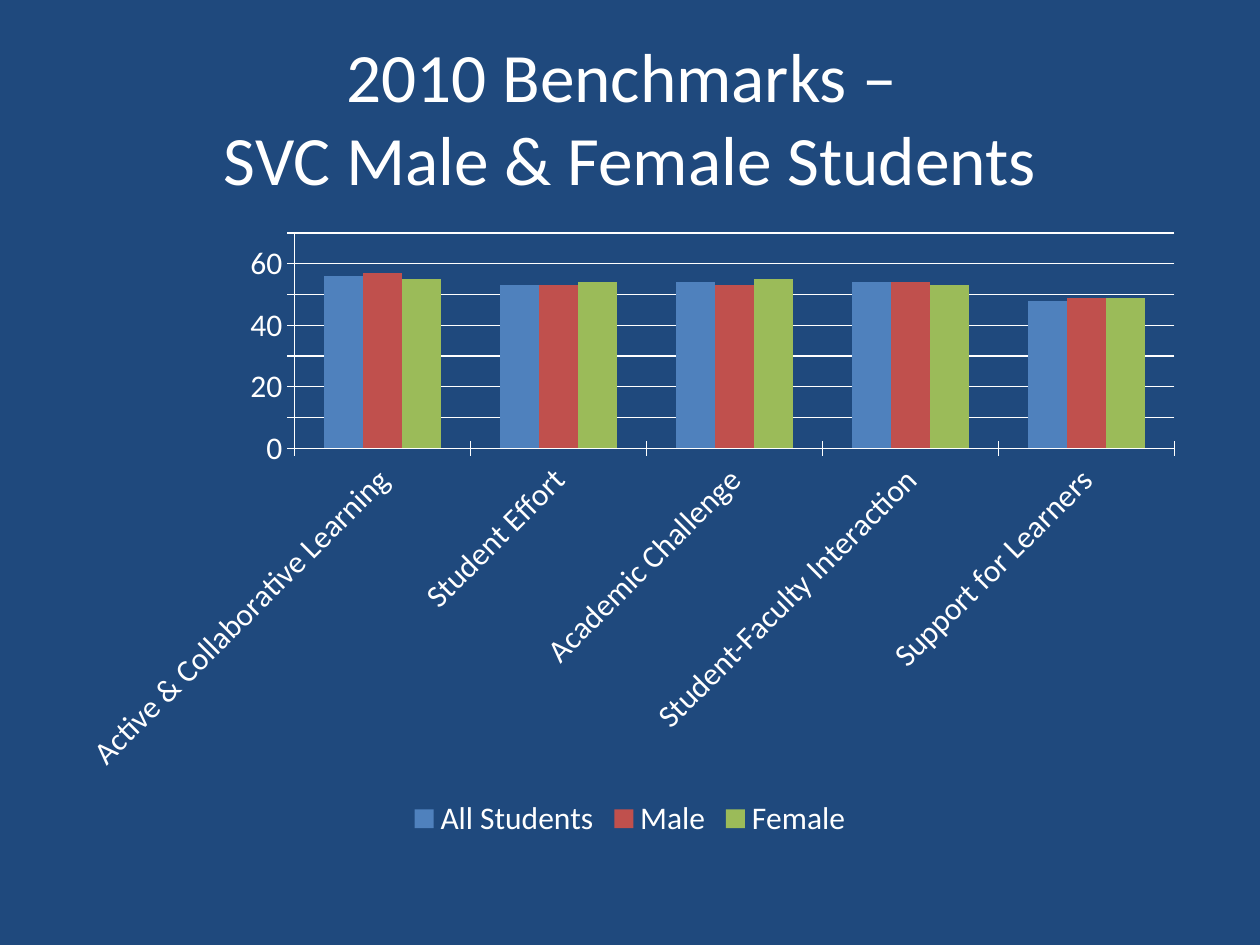
from pptx import Presentation
from pptx.chart.data import CategoryChartData
from pptx.dml.color import RGBColor
from pptx.enum.chart import XL_CHART_TYPE, XL_LEGEND_POSITION, XL_TICK_MARK
from pptx.enum.text import MSO_ANCHOR, PP_ALIGN
from pptx.util import Inches, Pt

NAVY = RGBColor(0x1F, 0x49, 0x7D)
WHITE = RGBColor(0xFF, 0xFF, 0xFF)
BLUE = RGBColor(0x4F, 0x81, 0xBD)
RED = RGBColor(0xC0, 0x50, 0x4D)
GREEN = RGBColor(0x9B, 0xBB, 0x59)

WIDE, HIGH = Inches(10), Inches(7.5)
TITLE = (0.05, 0.04, 0.9, 1 / 6)
CHART = (0.05, 0.7 / 3, 0.9, 0.66)

GROUPS = ["Active & Collaborative Learning", "Student Effort", "Academic Challenge",
          "Student-Faculty Interaction", "Support for Learners"]
SERIES = [
    ("All Students", BLUE, (56, 53, 54, 54, 48)),
    ("Male", RED, (57, 53, 53, 54, 49)),
    ("Female", GREEN, (55, 54, 55, 53, 49)),
]


def apply(item, **values):
    """Set each named format value on an item."""
    for name, value in values.items():
        setattr(item, name, value)


def style(font, size):
    """Give a font the white slide look."""
    apply(font, name="Calibri", size=Pt(size))
    font.color.rgb = WHITE


def place(box):
    """Turn shares of the slide into whole lengths."""
    return [round(share * side) for share, side in zip(box, (WIDE, HIGH) * 2)]


def add_title(slide, box, text):
    """Write the centred title in its box."""
    frame = slide.shapes.add_textbox(*place(box)).text_frame
    apply(frame, word_wrap=True, vertical_anchor=MSO_ANCHOR.MIDDLE, text=text)
    line = frame.paragraphs[0]
    line.alignment = PP_ALIGN.CENTER
    for run in line.runs:
        style(run.font, 39.6)


def add_bars(slide, box):
    """Draw the clustered columns with axes and legend."""
    data = CategoryChartData()
    data.categories = GROUPS
    for name, _, scores in SERIES:
        data.add_series(name, scores)
    kind = XL_CHART_TYPE.COLUMN_CLUSTERED
    chart = slide.shapes.add_chart(kind, *place(box), data).chart
    style(chart.font, 18)
    apply(chart, has_title=False, has_legend=True)
    apply(chart.legend, position=XL_LEGEND_POSITION.BOTTOM, include_in_layout=False)
    plot = chart.plots[0]
    apply(plot, gap_width=150, overlap=0, vary_by_categories=False)
    for bars, (_, color, _) in zip(plot.series, SERIES):
        bars.format.fill.solid()
        bars.format.fill.fore_color.rgb = color
    scale = chart.value_axis
    apply(scale, minimum_scale=0, maximum_scale=70, major_unit=10, has_major_gridlines=True)
    for axis in (scale, chart.category_axis):
        apply(axis, major_tick_mark=XL_TICK_MARK.CROSS, minor_tick_mark=XL_TICK_MARK.NONE)
    for part in (scale, chart.category_axis, scale.major_gridlines):
        part.format.line.color.rgb = WHITE
        part.format.line.width = Pt(0.75)


def main():
    """Build and save the slide."""
    deck = Presentation()
    apply(deck, slide_width=WIDE, slide_height=HIGH)
    slide = deck.slides.add_slide(deck.slide_layouts[6])
    fill = slide.background.fill
    fill.solid()
    fill.fore_color.rgb = NAVY
    add_title(slide, TITLE, "2010 Benchmarks – \vSVC Male & Female Students")
    add_bars(slide, CHART)
    deck.save("out.pptx")


if __name__ == "__main__":
    main()
